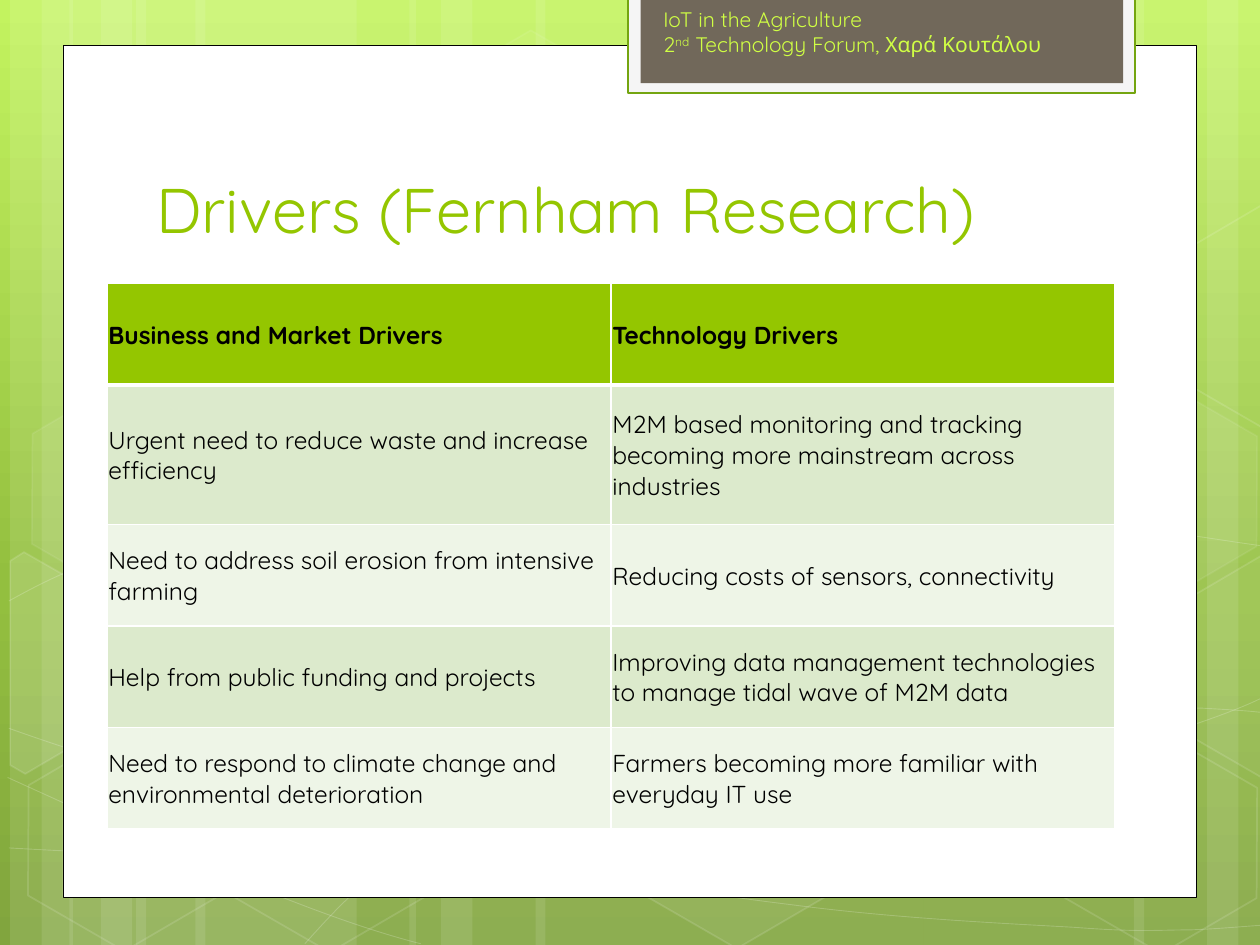
import copy
import math
from dataclasses import dataclass
from typing import Optional

import lxml.etree
import pptx
import pptx.dml.color
import pptx.enum.shapes
import pptx.enum.text
import pptx.oxml.ns
import pptx.util

RGB = pptx.dml.color.RGBColor
KIND = pptx.enum.shapes.MSO_SHAPE
ANCHOR = pptx.enum.text.MSO_ANCHOR
qn = pptx.oxml.ns.qn

WHITE, BLACK = RGB(0xFF, 0xFF, 0xFF), RGB(0, 0, 0)
GREEN, LIME = RGB(0x94, 0xC6, 0x00), RGB(0xD0, 0xFF, 0x44)
EDGE, PALE, BROWN = RGB(0x74, 0xA5, 0x10), RGB(0xF5, 0xF5, 0xF5), RGB(0x71, 0x68, 0x5A)
BANDS = RGB(0xDC, 0xEA, 0xCC), RGB(0xEE, 0xF5, 0xE7)
SKY = (0, RGB(0xC3, 0xF3, 0x5F)), (0.62, RGB(0x93, 0xBF, 0x3F)), (1, RGB(0x81, 0xA5, 0x3E))
FONT = "Quicksand"
TILT = 30

# The slide is a fine grid of 1000 columns by 750 rows
COLS, ROWS = 1000, 750
WIDE, HIGH = pptx.util.Inches(10), pptx.util.Inches(7.5)


@dataclass
class Box:
    x: float
    y: float
    w: float
    h: float

    def emu(self) -> list:
        return [col(self.x), row(self.y), col(self.w), row(self.h)]


@dataclass
class Look:
    fill: Optional[RGB] = None
    clear: Optional[int] = None      # fill opacity in percent
    line: Optional[RGB] = None
    width: float = 1
    faint: Optional[int] = None      # line opacity in percent


def col(n: float) -> int:
    return round(WIDE * n / COLS)


def row(n: float) -> int:
    return round(HIGH * n / ROWS)


def fade(part, share: Optional[int]) -> None:
    if share is not None:
        for tone in part.iter(qn("a:srgbClr")):
            lxml.etree.SubElement(tone, qn("a:alpha"), val=str(share * 1000))


def paint(shape, look: Look) -> None:
    shape.shadow.inherit = False
    props = shape._element.spPr
    if look.fill is None:
        shape.fill.background()
    else:
        shape.fill.solid()
        shape.fill.fore_color.rgb = look.fill
        fade(props.find(qn("a:solidFill")), look.clear)
    if look.line is None:
        shape.line.fill.background()
    else:
        shape.line.color.rgb = look.line
        shape.line.width = pptx.util.Pt(look.width)
        fade(props.find(qn("a:ln")), look.faint)


def block(shapes, box: Box, look: Look, kind=KIND.RECTANGLE):
    shape = shapes.add_shape(kind, *box.emu())
    paint(shape, look)
    return shape


def trace(shapes, dots: list, look: Look, close: bool):
    spots = [(col(x), row(y)) for x, y in dots]
    pen = shapes.build_freeform(*spots[0], scale=1.0)
    pen.add_line_segments(spots[1:], close=close)
    shape = pen.convert_to_shape()
    paint(shape, look)
    return shape


def bend(shape) -> None:
    """Turn each three straight steps into one cubic curve."""
    steps = list(shape._element.iter(qn("a:lnTo")))
    for i in range(0, len(steps), 3):
        first, *rest = steps[i:i + 3]
        first.tag = qn("a:cubicBezTo")
        for step in rest:
            first.append(step[0])
            step.getparent().remove(step)


def turn(dots: list, mid: tuple) -> list:
    """Dots turned back by the tilt about a middle."""
    c, s = math.cos(math.radians(TILT)), math.sin(math.radians(TILT))
    a, b = mid
    return [(a + (x - a) * c + (y - b) * s, b - (x - a) * s + (y - b) * c)
            for x, y in dots]


def write(frame, text: str, *, size: float, color: RGB, bold: bool = False,
          anchor=ANCHOR.TOP) -> None:
    """Line breaks part paragraphs; carets enclose raised text."""
    frame.word_wrap = True
    frame.vertical_anchor = anchor
    for i, line in enumerate(text.split("\n")):
        para = frame.add_paragraph() if i else frame.paragraphs[0]
        para.alignment = pptx.enum.text.PP_ALIGN.LEFT
        for j, piece in enumerate(line.split("^")):
            run = para.add_run()
            run.text = piece
            run.font.name, run.font.size = FONT, pptx.util.Pt(size)
            run.font.bold, run.font.color.rgb = bold, color
            if j % 2:
                run.font._element.set("baseline", "30000")


def border(cell, low: float) -> None:
    props = cell._tc.get_or_add_tcPr()
    for i, (side, width) in enumerate((("L", 1), ("R", 1), ("T", 1), ("B", low))):
        edge = lxml.etree.Element(qn("a:ln" + side), w=str(pptx.util.Pt(width)))
        fill = lxml.etree.SubElement(edge, qn("a:solidFill"))
        lxml.etree.SubElement(fill, qn("a:srgbClr"), val=str(WHITE))
        props.insert(i, edge)


def sky(slide) -> None:
    fill = slide.background.fill
    fill.gradient()
    fill.gradient_angle = 270
    stops = slide._element.find(".//" + qn("a:gsLst"))
    stops.insert(1, copy.deepcopy(stops[0]))
    for stop, (place, tone) in zip(fill.gradient_stops, SKY):
        stop.position, stop.color.rgb = place, tone


BARS = [(108, 175), (8, 50), (33, 83), (155, 175), (55, 50), (80, 83),
        (733, 175), (958, 50), (900, 83), (425, 308), (325, 50), (350, 83)]
CURVES = [
    [(7, 673), (61, 676), (115, 679), (190, 678), (265, 677), (358, 675), (458, 665),
     (558, 655), (700, 636), (792, 617), (883, 598), (977, 568), (1007, 551)],
    [(7, 477), (36, 461), (65, 446), (121, 431), (178, 416), (259, 394), (347, 387),
     (436, 380), (544, 379), (654, 387), (764, 395), (947, 426), (1007, 434)],
    [(6, 617), (127, 672), (247, 727), (334, 749)],
    [(7, 578), (38, 589), (70, 600), (128, 616), (186, 631), (273, 656), (357, 673),
     (440, 690), (545, 708), (628, 718), (711, 729), (800, 733), (853, 736),
     (905, 740), (919, 738), (945, 738), (971, 737), (989, 735), (1007, 734)],
    [(242, 749), (260, 729), (278, 709), (302, 691), (326, 673), (360, 653), (388, 639),
     (416, 625), (433, 619), (470, 609), (506, 599), (573, 585), (608, 578),
     (644, 571), (649, 571), (680, 569), (711, 566), (760, 563), (794, 562),
     (829, 561), (886, 562), (886, 562), (908, 562), (931, 562), (953, 562),
     (971, 563), (988, 564), (997, 565), (1006, 566), (1003, 565), (1006, 566)]]
# Left, top, fill opacity, line opacity
HEXES = [(334, 36, 4, 8), (497, 589, 6, 12), (11, 591, None, 12), (14, 312, 7, 8),
         (174, 592, None, 12), (753, 453, 10, 12), (834, 593, None, 12), (834, 314, 7, 8)]
# Hexagons cut by the slide's edge: fill opacity, middle, corners
CUT = [(926, 485), (1001, 441), (1009, 446), (1009, 613), (1002, 617), (926, 573)]
PARTS = [(10, (36, 535), [(8, 445), (19, 438), (96, 482), (95, 570), (20, 614), (8, 607)]),
         (4, (985, 520), CUT),
         (None, (985, 242), [(x, y - 278) for x, y in CUT])]

HEADS = "Business and Market Drivers", "Technology Drivers"
FACTS = [
    ("Urgent need to reduce waste and increase efficiency",
     "M2M based monitoring and tracking becoming more mainstream across industries"),
    ("Need to address soil erosion from intensive farming",
     "Reducing costs of sensors, connectivity"),
    ("Help from public funding and projects",
     "Improving data management technologies to manage tidal wave of M2M data"),
    ("Need to respond to climate change and environmental deterioration",
     "Farmers becoming more familiar with everyday IT use")]
TALL = [80.6, 110.6, 80.6, 80.6, 80.6]


def scene(shapes) -> None:
    for x, w in BARS:
        block(shapes, Box(x, 0, w, ROWS), Look(WHITE, 10))
    for knots in CURVES:
        bend(trace(shapes, knots, Look(line=WHITE, width=0.5, faint=20), False))
    for x, y, clear, faint in HEXES:
        look = Look(WHITE if clear else None, clear, WHITE, 1, faint)
        shape = block(shapes, Box(x, y, 175, 152), look, KIND.HEXAGON)
        shape.adjustments[0] = 0.285
        shape.rotation = TILT
    for clear, mid, dots in PARTS:
        look = Look(WHITE if clear else None, clear, WHITE, 1, 12)
        trace(shapes, turn(dots, mid), look, True).rotation = TILT


def grid(shapes) -> None:
    table = shapes.add_table(len(TALL), 2, *Box(85, 225, 800, sum(TALL)).emu()).table
    for column in table.columns:
        column.width = col(400)
    for i, texts in enumerate([HEADS, *FACTS]):
        table.rows[i].height = row(TALL[i])
        for j, text in enumerate(texts):
            cell = table.cell(i, j)
            cell.margin_left = cell.margin_right = cell.margin_top = col(1)
            cell.margin_bottom = 0
            cell.fill.solid()
            cell.fill.fore_color.rgb = BANDS[(i - 1) % 2] if i else GREEN
            border(cell, 1 if i else 3)
            write(cell.text_frame, text, size=14, color=BLACK, bold=not i)
            cell.vertical_anchor = ANCHOR.MIDDLE


def main() -> None:
    deck = pptx.Presentation()
    deck.slide_width, deck.slide_height = WIDE, HIGH
    slide = deck.slides.add_slide(deck.slide_layouts[5])
    shapes = slide.shapes

    # Backdrop, page and header tab
    sky(slide)
    scene(shapes.add_group_shape().shapes)
    block(shapes, Box(50, 36, 900, 676.5), Look(WHITE, line=BLACK, width=0.5))
    block(shapes, Box(498.6, -2, 402.4, 76), Look(PALE, line=EDGE, width=1.25))
    block(shapes, Box(508.4, -2, 383, 68), Look(BROWN))

    # Title, brought in front of the page
    title = shapes.title
    title.left, title.top, title.width, title.height = Box(114, 112, 768, 88).emu()
    title.text_frame.auto_size = pptx.enum.text.MSO_AUTO_SIZE.NONE
    write(title.text_frame, "Drivers (Fernham Research)", size=36, color=GREEN,
          anchor=ANCHOR.BOTTOM)
    shapes._spTree.append(title._element)

    # Header text and table
    note = shapes.add_textbox(*Box(516.6, 0, 367, 50).emu())
    write(note.text_frame, "IoT in the Agriculture\n2^nd^ Technology Forum, Χαρά Κουτάλου",
          size=12, color=LIME)
    grid(shapes)
    deck.save("out.pptx")


if __name__ == "__main__":
    main()
